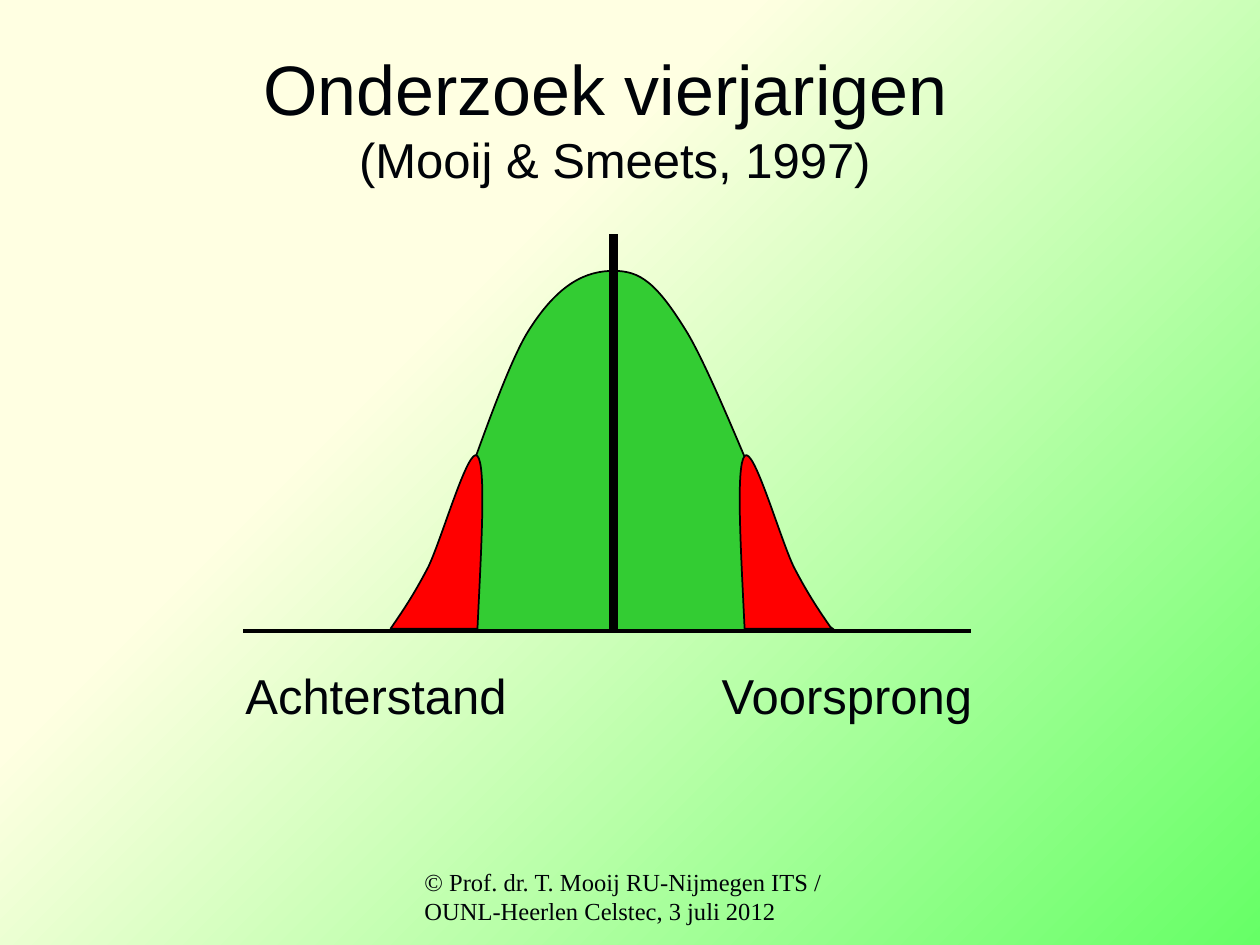
from dataclasses import dataclass

from lxml.etree import SubElement
from pptx import Presentation
from pptx.dml.color import RGBColor
from pptx.enum.shapes import MSO_CONNECTOR as Connector
from pptx.enum.text import MSO_ANCHOR as Anchor, PP_ALIGN as Align
from pptx.oxml import parse_xml
from pptx.oxml.ns import nsdecls, qn
from pptx.util import Inches, Pt


@dataclass(frozen=True)
class Theme:
    text: str = "000308"
    outline: str = "000000"
    middle: str = "33CC33"
    tail: str = "FF0000"
    light: str = "FFFFE2"
    green: str = "66FF66"
    sans: str = "Arial"
    serif: str = "Times New Roman"
    title_size: int = 40
    label_size: int = 28
    footer_size: int = 14


THEME = Theme()

# A start point, then two control points and an end point for each curve.
BELL = [
    (3.01, 5.01),
    (3.1, 5.01), (3.2, 5.01), (3.4, 4.62),
    (3.59, 4.22), (3.94, 3.06), (4.18, 2.65),
    (4.43, 2.24), (4.66, 2.15), (4.87, 2.15),
    (5.08, 2.15), (5.21, 2.24), (5.46, 2.65),
    (5.7, 3.06), (6.14, 4.22), (6.34, 4.62),
    (6.53, 5.01), (6.57, 4.94), (6.63, 5.01),
]
LEFT_TAIL = [
    (3.1, 4.99),
    (3.19, 4.86), (3.28, 4.73), (3.4, 4.5),
    (3.51, 4.27), (3.72, 3.53), (3.79, 3.62),
    (3.86, 3.7), (3.82, 4.35), (3.79, 4.99),
]
MIRROR_AXIS = 4.85
RIGHT_TAIL = [(2 * MIRROR_AXIS - x, y) for x, y in LEFT_TAIL]


def set_background(slide):
    """Radial gradient that spreads from the top left corner."""
    slide.background.fill.gradient()
    old = slide.background._cSld.find(".//" + qn("a:gradFill"))
    old.getparent().replace(old, parse_xml(
        f'<a:gradFill {nsdecls("a")} rotWithShape="0"><a:gsLst>'
        f'<a:gs pos="0"><a:srgbClr val="{THEME.light}"/></a:gs>'
        f'<a:gs pos="34000"><a:srgbClr val="{THEME.light}">'
        '<a:alpha val="74000"/></a:srgbClr></a:gs>'
        f'<a:gs pos="100000"><a:srgbClr val="{THEME.green}"/></a:gs>'
        '</a:gsLst><a:path path="circle">'
        '<a:fillToRect r="100000" b="100000"/></a:path></a:gradFill>'))


def add_run(paragraph, text, size, font):
    run = paragraph.add_run()
    run.text = text
    run.font.size = Pt(size)
    run.font.name = font
    run.font.color.rgb = RGBColor.from_string(THEME.text)


def add_text(slide, text, box, size=THEME.label_size, font=THEME.sans,
             align=Align.LEFT, anchor=Anchor.TOP, line_spacing=None,
             space_before=None, hanging=0, subtitle=None):
    shape = slide.shapes.add_textbox(*map(Inches, box))
    frame = shape.text_frame
    frame.word_wrap = True
    frame.vertical_anchor = anchor
    paragraph = frame.paragraphs[0]
    paragraph.alignment = align
    paragraph.line_spacing = line_spacing
    paragraph.space_before = space_before
    if hanging:
        properties = paragraph._p.get_or_add_pPr()
        properties.set("marL", str(Inches(hanging)))
        properties.set("indent", str(-Inches(hanging)))
    add_run(paragraph, text, size, font)
    if subtitle:
        paragraph.add_line_break()
        add_run(paragraph, subtitle, THEME.label_size, font)


def add_area(group, points, color):
    """Closed area whose points after the first form cubic curves."""
    start, *rest = [(Inches(x), Inches(y)) for x, y in points]
    builder = group.shapes.build_freeform(*start)
    builder.add_line_segments(rest + [start], close=True)
    shape = builder.convert_to_shape()

    # Gather the points by three into curves; the last line stays straight
    lines = shape._element.findall(".//" + qn("a:lnTo"))
    outline = lines[0].getparent()
    for index in range(0, len(rest), 3):
        curve = SubElement(outline, qn("a:cubicBezTo"))
        lines[index].addprevious(curve)
        for line in lines[index:index + 3]:
            curve.append(line[0])
            outline.remove(line)

    shape.shadow.inherit = False
    shape.fill.solid()
    shape.fill.fore_color.rgb = RGBColor.from_string(color)
    shape.line.color.rgb = RGBColor.from_string(THEME.outline)
    shape.line.width = Pt(1)


def add_line(group, start, end, width):
    line = group.shapes.add_connector(
        Connector.STRAIGHT, *map(Inches, start + end))
    line.line.color.rgb = RGBColor.from_string(THEME.outline)
    line.line.width = Pt(width)
    line._element.spPr.append(parse_xml(f'<a:effectLst {nsdecls("a")}/>'))


def add_distribution(slide):
    group = slide.shapes.add_group_shape()
    add_area(group, BELL, THEME.middle)
    add_area(group, LEFT_TAIL, THEME.tail)
    add_area(group, RIGHT_TAIL, THEME.tail)
    # Centre line and base line
    add_line(group, (4.87, 1.86), (4.87, 5.01), 5)
    add_line(group, (1.93, 5.01), (7.71, 5.01), 2)


def main():
    presentation = Presentation()
    presentation.slide_width = Inches(10)
    presentation.slide_height = Inches(7.5)
    slide = presentation.slides.add_slide(presentation.slide_layouts[6])
    set_background(slide)

    # Title
    add_text(slide, "Onderzoek vierjarigen ", (0.51, 0, 8.74, 1.86),
             size=THEME.title_size, align=Align.CENTER, anchor=Anchor.MIDDLE,
             subtitle="(Mooij & Smeets, 1997)")

    # Labels below the two tails
    for label, box in (("Achterstand", (1.85, 5.32, 3.07, 1.59)),
                       ("Voorsprong", (5.63, 5.32, 4.1, 1.34))):
        add_text(slide, label, box, line_spacing=0.8,
                 space_before=Pt(0.2 * THEME.label_size), hanging=0.38)

    # Footer
    add_text(slide, "© Prof. dr. T. Mooij RU-Nijmegen ITS / "
             "OUNL-Heerlen Celstec, 3 juli 2012", (3.27, 6.83, 3.47, 0.5),
             size=THEME.footer_size, font=THEME.serif)

    add_distribution(slide)
    presentation.save("out.pptx")


if __name__ == "__main__":
    main()
